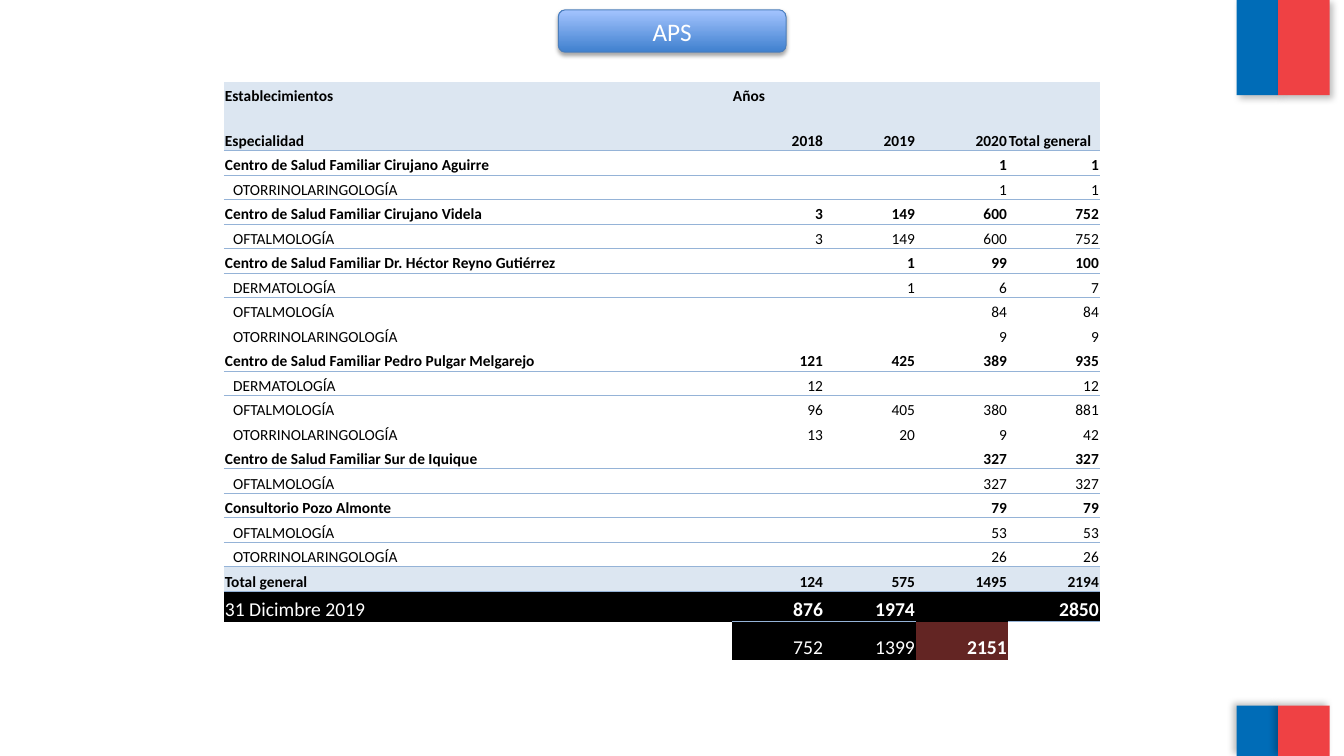
from dataclasses import dataclass

import lxml.etree
import pptx
import pptx.dml.color
import pptx.enum.shapes
import pptx.enum.text
import pptx.oxml.ns
import pptx.util

Pt = pptx.util.Pt
ALIGN = pptx.enum.text.PP_ALIGN
ANCHOR = pptx.enum.text.MSO_ANCHOR
SHAPE = pptx.enum.shapes.MSO_SHAPE
qn = pptx.oxml.ns.qn

FONT = "Calibri"
COLORS = {
    "blue": "006CB7", "red": "EF4144", "button_dark": "3F80CE",
    "button_light": "A4C4FF", "button_line": "4B7EBC", "header": "DCE6F1",
    "rule": "95B3D7", "black": "000000", "white": "FFFFFF", "maroon": "632523",
}
NO_STYLE = "{2D5ABB26-0587-4C30-8999-92F81FD0307C}"
COLUMN_WIDTHS = (362.9, 65.7, 65.7, 65.7, 65.7)


@dataclass(frozen=True)
class Box:
    left: float
    top: float
    width: float
    height: float


@dataclass(frozen=True)
class Shadow:
    alpha: int
    blur: float
    distance: float
    angle: int


@dataclass(frozen=True)
class Flag:
    box: Box
    color: str
    shadow: Shadow


@dataclass(frozen=True)
class Row:
    texts: tuple[str, ...]
    height: float = 17.5
    size: float = 11
    color: str = "black"
    fill: str = ""
    indent: float = 0.7
    bold: tuple[int, ...] = ()
    left: tuple[int, ...] = (0,)
    ruled: tuple[int, ...] = ()
    fills: tuple[str, ...] = ()


ALL = (0, 1, 2, 3, 4)


def group(*texts: str) -> Row:
    return Row(texts, bold=ALL, ruled=ALL)


def specialty(*texts: str, ruled: tuple[int, ...] = ()) -> Row:
    return Row(texts, indent=6.5, ruled=ruled)


DOWN = Shadow(25, 5, 3, 45)
UP = Shadow(25, 5, 3, 215)
FLAGS = (
    Flag(Box(883.4, -0.7, 29.6, 68.7), "blue", DOWN),
    Flag(Box(913, 0, 36.7, 68), "red", DOWN),
    Flag(Box(883.4, 504, 29.6, 36), "blue", UP),
    Flag(Box(913, 504, 36.7, 36), "red", UP),
)
BUTTON = Box(398.8, 7, 162.7, 30.3)

ROWS = (
    Row(("Establecimientos", "Años", "", "", ""), fill="header", bold=ALL, left=ALL),
    Row(("Especialidad", "2018", "2019", "2020", "Total general"), 31.7,
        fill="header", bold=ALL, left=(0, 4), ruled=ALL),
    group("Centro de Salud Familiar Cirujano Aguirre", "", "", "1", "1"),
    specialty("OTORRINOLARINGOLOGÍA", "", "", "1", "1"),
    group("Centro de Salud Familiar Cirujano Videla", "3", "149", "600", "752"),
    specialty("OFTALMOLOGÍA", "3", "149", "600", "752"),
    group("Centro de Salud Familiar Dr. Héctor Reyno Gutiérrez", "", "1", "99", "100"),
    specialty("DERMATOLOGÍA", "", "1", "6", "7"),
    specialty("OFTALMOLOGÍA", "", "", "84", "84"),
    specialty("OTORRINOLARINGOLOGÍA", "", "", "9", "9"),
    group("Centro de Salud Familiar Pedro Pulgar Melgarejo", "121", "425", "389", "935"),
    specialty("DERMATOLOGÍA", "12", "", "", "12"),
    specialty("OFTALMOLOGÍA", "96", "405", "380", "881"),
    specialty("OTORRINOLARINGOLOGÍA", "13", "20", "9", "42"),
    group("Centro de Salud Familiar Sur de Iquique", "", "", "327", "327"),
    specialty("OFTALMOLOGÍA", "", "", "327", "327"),
    group("Consultorio Pozo Almonte", "", "", "79", "79"),
    specialty("OFTALMOLOGÍA", "", "", "53", "53"),
    specialty("OTORRINOLARINGOLOGÍA", "", "", "26", "26", ruled=ALL),
    Row(("Total general", "124", "575", "1495", "2194"), fill="header",
        bold=ALL, ruled=(1, 2, 4)),
    Row(("31 Dicimbre 2019", "876", "1974", "", "2850"), 21.8, 14, "white",
        "black", bold=(1, 2, 3, 4)),
    Row(("", "752", "1399", "2151", ""), 27.3, 14, "white", bold=(3,),
        fills=("", "black", "black", "maroon", "")),
)


def rgb(name: str) -> pptx.dml.color.RGBColor:
    return pptx.dml.color.RGBColor.from_string(COLORS[name])


def add_box(s, kind, box: Box, shadow: Shadow):
    sp = s.shapes.add_shape(
        kind, Pt(box.left), Pt(box.top), Pt(box.width), Pt(box.height))
    sp.shadow.inherit = False
    effects = sp._element.spPr.find(qn("a:effectLst"))
    outer = lxml.etree.SubElement(
        effects, qn("a:outerShdw"), blurRad=str(Pt(shadow.blur)),
        dist=str(Pt(shadow.distance)), dir=str(shadow.angle * 60000),
        algn="ctr", rotWithShape="0")
    color = lxml.etree.SubElement(outer, qn("a:srgbClr"), val=COLORS["black"])
    lxml.etree.SubElement(color, qn("a:alpha"), val=str(shadow.alpha * 1000))
    return sp


def add_flag(s, flag: Flag) -> None:
    sp = add_box(s, SHAPE.RECTANGLE, flag.box, flag.shadow)
    sp.fill.solid()
    sp.fill.fore_color.rgb = rgb(flag.color)
    sp.line.fill.background()


def format_run(r, size: float, color: str, bold: bool) -> None:
    r.font.name = FONT
    r.font.size = Pt(size)
    r.font.bold = bold
    r.font.color.rgb = rgb(color)


def add_title(s, text: str) -> None:
    button = add_box(s, SHAPE.ROUNDED_RECTANGLE, BUTTON, Shadow(35, 3.1, 1.8, 90))
    button.fill.gradient()
    button.fill.gradient_angle = 90
    for stop, color in zip(button.fill.gradient_stops, ("button_dark", "button_light")):
        stop.color.rgb = rgb(color)
    button.line.color.rgb = rgb("button_line")
    button.line.width = Pt(0.75)

    title = s.shapes.title
    title.left, title.top = button.left, button.top
    title.width, title.height = button.width, button.height
    s.shapes._spTree.append(title._element)
    tf = title.text_frame
    tf.text = text
    tf.auto_size = pptx.enum.text.MSO_AUTO_SIZE.NONE
    tf.vertical_anchor = ANCHOR.MIDDLE
    p = tf.paragraphs[0]
    p.alignment = ALIGN.CENTER
    format_run(p.runs[0], 18, "white", False)


def add_rule(cell, side: str) -> None:
    line = lxml.etree.SubElement(
        cell._tc.get_or_add_tcPr(), qn(f"a:ln{side}"), w=str(Pt(0.5)))
    fill = lxml.etree.SubElement(line, qn("a:solidFill"))
    lxml.etree.SubElement(fill, qn("a:srgbClr"), val=COLORS["rule"])


def fill_cell(cell, row: Row, column: int) -> None:
    fill = row.fills[column] if row.fills else row.fill
    if fill:
        cell.fill.solid()
        cell.fill.fore_color.rgb = rgb(fill)
    else:
        cell.fill.background()
    cell.margin_left = Pt(row.indent if column == 0 else 0.7)
    cell.margin_right = cell.margin_top = Pt(0.7)
    cell.margin_bottom = 0
    cell.vertical_anchor = ANCHOR.BOTTOM
    cell.text_frame.text = row.texts[column]
    p = cell.text_frame.paragraphs[0]
    p.alignment = ALIGN.LEFT if column in row.left else ALIGN.RIGHT
    for r in p.runs:
        format_run(r, row.size, row.color, column in row.bold)
    if not p.runs:
        lxml.etree.SubElement(p._p, qn("a:endParaRPr"), sz=str(row.size * 100))


def add_waiting_table(s) -> None:
    frame = s.shapes.add_table(
        len(ROWS), len(COLUMN_WIDTHS), Pt(160), Pt(58.3),
        Pt(sum(COLUMN_WIDTHS)), Pt(sum(row.height for row in ROWS)))
    table = frame.table
    table.first_row = table.horz_banding = False
    table._tbl.tblPr.find(qn("a:tableStyleId")).text = NO_STYLE
    for column, width in zip(table.columns, COLUMN_WIDTHS):
        column.width = Pt(width)
    above: tuple[int, ...] = ()
    for i, row in enumerate(ROWS):
        table.rows[i].height = Pt(row.height)
        for j in ALL:
            cell = table.cell(i, j)
            for side, ruled in (("T", above), ("B", row.ruled)):
                if j in ruled:
                    add_rule(cell, side)
            fill_cell(cell, row, j)
        above = row.ruled


def main() -> None:
    prs = pptx.Presentation()
    prs.slide_width, prs.slide_height = Pt(960), Pt(540)
    s = prs.slides.add_slide(prs.slide_layouts.get_by_name("Title Only"))
    for flag in FLAGS:
        add_flag(s, flag)
    add_title(s, "APS")
    add_waiting_table(s)
    prs.save("out.pptx")


if __name__ == "__main__":
    main()
